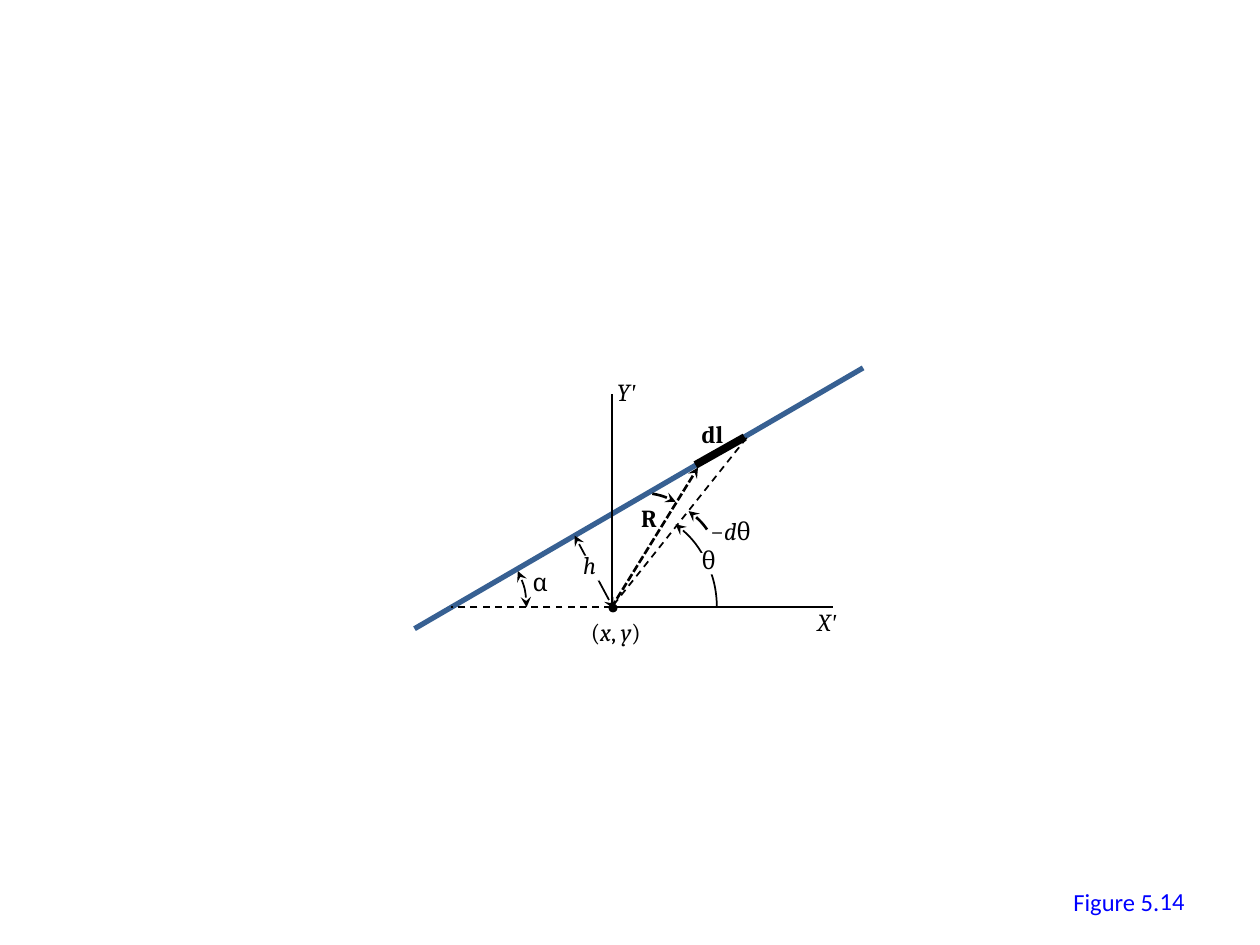
from dataclasses import dataclass
from typing import Optional

from lxml import etree
from pptx import Presentation
from pptx import util as u
from pptx.dml.color import RGBColor
from pptx.enum import dml, shapes, text
from pptx.oxml.ns import qn

COLORS = {"ink": "000000", "wire": "376092", "caption": "0000FF", "mask": "FFFFFF"}
DASH = dml.MSO_LINE.DASH
SHORT_DASH = dml.MSO_LINE.SQUARE_DOT
LABEL_HEIGHT = 0.34


@dataclass
class Line:
    start: tuple[float, float]
    end: tuple[float, float]
    width: float = 1
    color: str = "ink"
    dash: Optional[dml.MSO_LINE] = None
    arrows: tuple[str, ...] = ()


@dataclass
class Arc:
    left: float
    top: float
    size: float
    start: float
    end: float
    width: float = 1
    arrows: tuple[str, ...] = ()


@dataclass
class Run:
    text: str
    bold: bool = False
    italic: bool = False
    font: str = "Cambria"


@dataclass
class Label:
    left: float
    top: float
    width: float
    runs: list[Run]
    mask: Optional[tuple[float, float, float, float]] = None


def rgb(name: str) -> RGBColor:
    return RGBColor.from_string(COLORS[name])


def style_line(shape, width: float, color: str, arrows: tuple[str, ...] = ()) -> None:
    shape.line.width = u.Pt(width)
    shape.line.color.rgb = rgb(color)
    outline = shape.line._get_or_add_ln()
    for end in arrows:
        etree.SubElement(outline, qn(f"a:{end}"), type="stealth")


def draw_line(slide, line: Line) -> None:
    connector = slide.shapes.add_connector(
        shapes.MSO_CONNECTOR.STRAIGHT, *map(u.Inches, line.start + line.end))
    if line.dash is not None:
        connector.line.dash_style = line.dash
    style_line(connector, line.width, line.color, line.arrows)
    etree.SubElement(connector._element.spPr, qn("a:effectLst"))


def draw_shape(slide, kind, box: tuple[float, ...], fill: Optional[str] = None):
    shape = slide.shapes.add_shape(kind, *map(u.Inches, box))
    shape.shadow.inherit = False
    if fill:
        shape.fill.solid()
        shape.fill.fore_color.rgb = rgb(fill)
    else:
        shape.fill.background()
    return shape


def draw_arc(slide, arc: Arc) -> None:
    shape = draw_shape(slide, shapes.MSO_SHAPE.ARC, (arc.left, arc.top, arc.size, arc.size))
    # Adjustments count 60000ths of a degree in units of 100000
    shape.adjustments[0] = arc.start * 0.6
    shape.adjustments[1] = arc.end * 0.6
    style_line(shape, arc.width, "ink", arc.arrows)


def draw_text(slide, box: tuple[float, ...], runs: list[Run], color: str = "ink",
              wrap: bool = False):
    text_box = slide.shapes.add_textbox(*map(u.Inches, box))
    frame = text_box.text_frame
    frame.word_wrap = wrap
    if not wrap:
        frame.auto_size = text.MSO_AUTO_SIZE.SHAPE_TO_FIT_TEXT
    for part in runs:
        run = frame.paragraphs[0].add_run()
        run.text = part.text
        run.font.size = u.Pt(14)
        run.font.name = part.font
        run.font.bold = part.bold
        run.font.italic = part.italic
        run.font.color.rgb = rgb(color)
    return frame


def draw_label(slide, label: Label) -> None:
    if label.mask:
        mask = draw_shape(slide, shapes.MSO_SHAPE.RECTANGLE, label.mask, "mask")
        mask.line.fill.background()
    draw_text(slide, (label.left, label.top, label.width, LABEL_HEIGHT), label.runs)


HEAD, TAIL = "headEnd", "tailEnd"
BOTH = (HEAD, TAIL)
PRIME = Run("'", italic=True, font="Times New Roman")

LINES = [
    Line((6.85, 2.92), (3.29, 4.99), 3, "wire"),
    Line((6.61, 4.82), (4.86, 4.82)),  # X' axis
    Line((4.86, 3.13), (4.86, 4.82)),  # Y' axis
    Line((4.85, 4.82), (3.58, 4.82), dash=DASH),
    Line((5.54, 3.71), (4.86, 4.81), 1.5, dash=SHORT_DASH, arrows=(HEAD,)),  # R
    Line((4.87, 4.8), (5.93, 3.47), dash=DASH),
    Line((4.56, 4.25), (4.87, 4.83), arrows=BOTH),  # h
    Line((5.91, 3.47), (5.52, 3.69), 4.5),  # dl
]

ARCS = [
    Arc(2.92, 4.19, 1.26, 332.87, 0, arrows=BOTH),  # alpha
    Arc(4.06, 4, 1.63, 306.72, 0, arrows=(HEAD,)),  # theta
    Arc(4.47, 3.94, 1.26, 305.46, 324.35, 1.5, (HEAD,)),
    Arc(4.44, 3.91, 1.26, 279.86, 297.78, 1.5, (TAIL,)),
]

LABELS = [
    Label(5.47, 3.28, 0.37, [Run("dl", bold=True)]),
    Label(5.54, 4.05, 0.52, [Run("−"), Run("d", italic=True), Run("θ")]),
    Label(4.13, 4.45, 0.33, [Run("α")]),
    Label(4.53, 4.32, 0.35, [Run("h", italic=True)], mask=(4.6, 4.41, 0.16, 0.2)),
    Label(4.99, 3.94, 0.34, [Run("R", bold=True)]),
    Label(4.8, 2.94, 0.42, [Run("Y", italic=True), PRIME]),
    Label(6.39, 4.77, 0.43, [Run("X", italic=True), PRIME]),
    Label(5.47, 4.28, 0.31, [Run("θ")], mask=(5.51, 4.39, 0.17, 0.17)),
    Label(4.59, 4.85, 0.61, [Run("("), Run("x", italic=True), Run(", "),
                             Run("y", italic=True), Run(")")]),
]


def main() -> None:
    presentation = Presentation()
    presentation.slide_width = u.Inches(10)
    presentation.slide_height = u.Inches(7.5)
    slide = presentation.slides.add_slide(presentation.slide_layouts[6])

    # Geometry of the wire and the field point
    for line in LINES:
        draw_line(slide, line)
    for arc in ARCS:
        draw_arc(slide, arc)

    # Labels
    for label in LABELS:
        draw_label(slide, label)

    # Field point
    point = draw_shape(slide, shapes.MSO_SHAPE.OVAL, (4.84, 4.8, 0.05, 0.05), "ink")
    style_line(point, 1.5, "ink")

    # Figure caption and number
    draw_text(slide, (8.42, 6.99, 0.89, LABEL_HEIGHT),
              [Run("Figure 5.", font="Calibri")], "caption")
    number = draw_text(slide, (7.17, 6.95, 2.33, 0.4),
                       [Run("14", font="Calibri")], "caption", wrap=True)
    number.vertical_anchor = text.MSO_ANCHOR.MIDDLE
    number.paragraphs[0].alignment = text.PP_ALIGN.RIGHT

    presentation.save("out.pptx")


if __name__ == "__main__":
    main()
